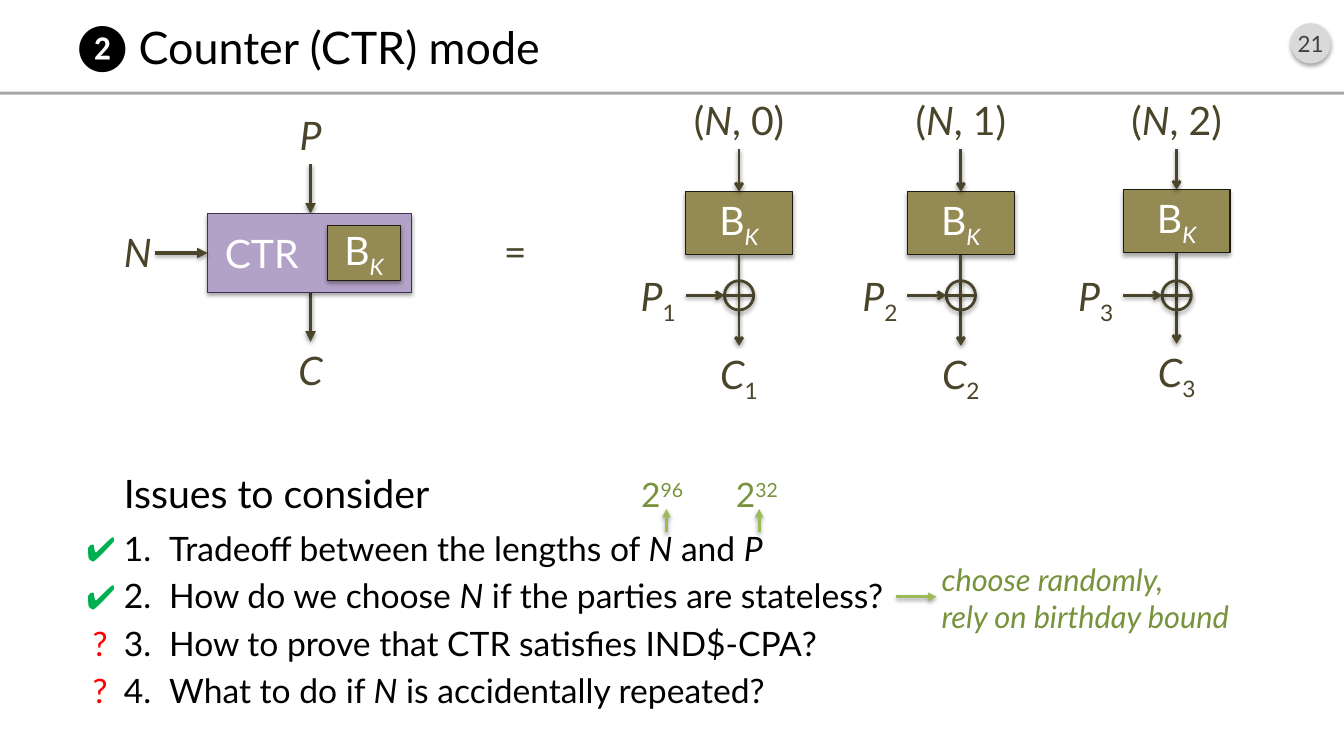
from dataclasses import dataclass

from lxml import etree
from pptx import Presentation, util as u
from pptx.dml.color import RGBColor
from pptx.enum import shapes as s, text as t
from pptx.oxml import ns

BLACK = RGBColor(0x00, 0x00, 0x00)
WHITE = RGBColor(0xFF, 0xFF, 0xFF)
RULE_GRAY = RGBColor(0xA6, 0xA6, 0xA6)
BADGE_GRAY = RGBColor(0xD9, 0xD9, 0xD9)
BADGE_TEXT = RGBColor(0x40, 0x40, 0x40)
BROWN = RGBColor(0x4A, 0x45, 0x2A)
OLIVE = RGBColor(0x94, 0x8A, 0x54)
OLIVE_EDGE = RGBColor(0x1E, 0x1C, 0x11)
PURPLE = RGBColor(0xB3, 0xA2, 0xC7)
PURPLE_EDGE = RGBColor(0x40, 0x31, 0x52)
NOTE_GREEN = RGBColor(0x77, 0x93, 0x3C)
ARROW_GREEN = RGBColor(0x9B, 0xBB, 0x59)
CHECK_GREEN = RGBColor(0x00, 0xB0, 0x50)
RED = RGBColor(0xFF, 0x00, 0x00)

LEFT, CENTER, RIGHT = t.PP_ALIGN.LEFT, t.PP_ALIGN.CENTER, t.PP_ALIGN.RIGHT
RECTANGLE, OVAL = s.MSO_SHAPE.RECTANGLE, s.MSO_SHAPE.OVAL
XOR_Y, XOR_SIZE = 2.93, 0.29
BLOCK_WIDTH, BLOCK_HEIGHT = 1.06, 0.63


@dataclass(frozen=True)
class Run:
    text: str
    italic: bool = False
    baseline: int = 0


@dataclass(frozen=True)
class Block:
    index: int
    center: float
    top: float


@dataclass(frozen=True)
class Mark:
    symbol: str
    left: float
    width: float
    color: RGBColor


N, P, C = (Run(letter, italic=True) for letter in "NPC")
CIPHER = [Run("B"), Run("K", italic=True, baseline=-25)]

BLOCKS = [Block(1, 7.33, 1.9), Block(2, 9.53, 1.9), Block(3, 11.67, 1.88)]
ISSUES = [
    [Run("Tradeoff between the lengths of "), N, Run(" and "), P],
    [Run("How do we choose "), N, Run(" if the parties are stateless?")],
    [Run("How to prove that CTR satisfies IND$-CPA?")],
    [Run("What to do if "), N, Run(" is accidentally repeated?")],
]
MARKS = [
    Mark("✔", 0.76, 0.54, CHECK_GREEN),
    Mark("✔", 0.76, 0.47, CHECK_GREEN),
    Mark("?", 0.82, 0.36, RED),
    Mark("?", 0.82, 0.36, RED),
]


def write(frame, runs: list[Run], size: float = 28, color: RGBColor = BROWN,
          align=LEFT, space_after: float = 0, numbered: bool = False) -> None:
    paragraph = frame.paragraphs[0]
    if paragraph.runs:
        paragraph = frame.add_paragraph()
    paragraph.alignment = align
    paragraph.space_after = u.Pt(space_after)
    if numbered:
        properties = paragraph._p.get_or_add_pPr()
        properties.set("marL", str(u.Inches(0.45)))
        properties.set("indent", str(u.Inches(-0.45)))
        etree.SubElement(properties, ns.qn("a:buFont"), typeface="+mj-lt")
        etree.SubElement(properties, ns.qn("a:buAutoNum"), type="arabicPeriod")
    for item in runs:
        for position, line in enumerate(item.text.split("\n")):
            if position:
                paragraph.add_line_break()
            run = paragraph.add_run()
            run.text = line
            run.font.name = "Lato"
            run.font.size = u.Pt(size)
            run.font.color.rgb = color
            run.font.italic = item.italic
            if item.baseline:
                run._r.get_or_add_rPr().set("baseline", str(item.baseline * 1000))


def add_shadow(shape, opacity: int, distance: float) -> None:
    effects = etree.SubElement(shape._element.spPr, ns.qn("a:effectLst"))
    shadow = etree.SubElement(
        effects, ns.qn("a:outerShdw"), blurRad=str(u.Pt(3.1)),
        dist=str(u.Pt(distance)), dir="5400000", rotWithShape="0")
    black = etree.SubElement(shadow, ns.qn("a:srgbClr"), val="000000")
    etree.SubElement(black, ns.qn("a:alpha"), val=str(opacity * 1000))


def add_label(slide, left: float, top: float, width: float, runs: list[Run],
              height: float = 0.57, wrap: bool = True, **style):
    label = slide.shapes.add_textbox(*map(u.Inches, (left, top, width, height)))
    label.text_frame.word_wrap = wrap
    label.text_frame.auto_size = t.MSO_AUTO_SIZE.SHAPE_TO_FIT_TEXT
    write(label.text_frame, runs, **style)
    return label


def add_box(slide, kind, left: float, top: float, width: float, height: float,
            fill: RGBColor | None = None, edge: RGBColor | None = None,
            edge_width: float = 0.75, shadowed: bool = True):
    shape = slide.shapes.add_shape(kind, *map(u.Inches, (left, top, width, height)))
    if fill is None:
        shape.fill.background()
    else:
        shape.fill.solid()
        shape.fill.fore_color.rgb = fill
    if edge is None:
        shape.line.fill.background()
    else:
        shape.line.color.rgb = edge
        shape.line.width = u.Pt(edge_width)
    if shadowed:
        add_shadow(shape, 35, 1.8)
    else:
        shape.shadow.inherit = False
    shape.text_frame.vertical_anchor = t.MSO_ANCHOR.MIDDLE
    return shape


def add_line(slide, x1: float, y1: float, x2: float, y2: float,
             color: RGBColor = BROWN, width: float = 2, head: str = "") -> None:
    line = slide.shapes.add_connector(
        s.MSO_CONNECTOR.STRAIGHT, *map(u.Inches, (x1, y1, x2, y2)))
    line.line.color.rgb = color
    line.line.width = u.Pt(width)
    if head:
        outline = line._element.spPr.find(ns.qn("a:ln"))
        etree.SubElement(outline, ns.qn("a:tailEnd"), type=head)
    add_shadow(line, 38, 1.6)


def add_cipher(slide, left: float, top: float, width: float, height: float) -> None:
    cipher = add_box(slide, RECTANGLE, left, top, width, height, OLIVE, OLIVE_EDGE)
    write(cipher.text_frame, CIPHER, color=WHITE, align=CENTER)


def add_block(slide, block: Block) -> None:
    center, top = block.center, block.top
    left, bottom = center - BLOCK_WIDTH / 2, top + BLOCK_HEIGHT
    xor_left = center - XOR_SIZE / 2
    index = Run(str(block.index), baseline=-25)
    add_cipher(slide, left, top, BLOCK_WIDTH, BLOCK_HEIGHT)
    add_line(slide, center, 1.48, center, top, head="arrow")
    add_line(slide, center, bottom, center, bottom + 0.9, head="arrow")
    add_label(slide, center - 0.77, 0.91, 1.54,
              [Run("("), N, Run(f", {block.index - 1})")], align=CENTER)
    add_label(slide, center - 0.77, bottom + 0.9, 1.54, [C, index], align=CENTER)
    add_box(slide, OVAL, xor_left, XOR_Y - XOR_SIZE / 2, XOR_SIZE, XOR_SIZE,
            edge=BROWN, edge_width=2)
    add_line(slide, xor_left, XOR_Y, xor_left + XOR_SIZE, XOR_Y)
    add_label(slide, left - 0.77, 2.65, 0.77, [P, index], align=RIGHT)
    add_line(slide, left, XOR_Y, xor_left, XOR_Y, head="arrow")


def add_header(slide) -> None:
    badge = add_box(slide, OVAL, 12.8, 0.23, 0.4, 0.4, BADGE_GRAY)
    badge.text_frame.margin_left = badge.text_frame.margin_right = 0
    write(badge.text_frame, [Run("21")], size=16, color=BADGE_TEXT, align=CENTER)
    add_box(slide, RECTANGLE, 0, 0.91, 13.33, 0.03, RULE_GRAY, shadowed=False)
    title = slide.shapes.title
    title.left, title.top, title.width, title.height = map(
        u.Inches, (0.67, 0.16, 12, 0.6))
    title.text_frame.auto_size = t.MSO_AUTO_SIZE.NONE
    title.text_frame.vertical_anchor = t.MSO_ANCHOR.MIDDLE
    write(title.text_frame, [Run("❷ Counter (CTR) mode")], size=32, color=BLACK)


def add_mode(slide) -> None:
    for start, end in ((1.63, 2.12), (2.9, 3.39)):
        add_line(slide, 3.08, start, 3.08, end, width=2.5, head="triangle")
    mode = add_box(slide, RECTANGLE, 2.06, 2.12, 2.02, 0.78, PURPLE, PURPLE_EDGE)
    mode.text_frame.margin_left = u.Inches(0.17)
    write(mode.text_frame, [Run("CTR")], color=WHITE)
    add_cipher(slide, 3.25, 2.24, 0.72, 0.54)
    add_label(slide, 2.64, 1.06, 0.88, [P], align=CENTER)
    add_label(slide, 2.64, 3.39, 0.88, [C], align=CENTER)
    add_label(slide, 1.13, 2.22, 0.41, [N], align=RIGHT)
    add_line(slide, 1.54, 2.51, 2.06, 2.51, width=2.5, head="triangle")
    add_label(slide, 4.67, 2.21, 0.88, [Run("=")], align=CENTER)


def add_issues(slide) -> None:
    issues = add_label(slide, 1.13, 4.61, 7.86, [Run("Issues to consider")],
                       height=2.51, wrap=False, color=BLACK, space_after=8)
    for issue in ISSUES:
        write(issues.text_frame, issue, size=24, color=BLACK, space_after=5,
              numbered=True)
    for row, mark in enumerate(MARKS):
        add_label(slide, mark.left, 5.19 + 0.47 * row, mark.width, [Run(mark.symbol)],
                  height=0.5, wrap=False, size=24, color=mark.color)
    for left, arrow_x, exponent in ((6.26, 6.61, "96"), (7.2, 7.53, "32")):
        add_label(slide, left, 4.65, 0.66, [Run("2"), Run(exponent, baseline=30)],
                  height=0.5, wrap=False, size=24, color=NOTE_GREEN)
        add_line(slide, arrow_x, 5.28, arrow_x, 5.05, ARROW_GREEN, head="triangle")
    add_label(slide, 9.24, 5.51, 3.14,
              [Run("choose randomly,\nrely on birthday bound", italic=True)],
              height=0.84, wrap=False, size=22, color=NOTE_GREEN)
    add_line(slide, 8.89, 5.92, 9.29, 5.92, ARROW_GREEN, head="triangle")


def main() -> None:
    presentation = Presentation()
    presentation.slide_width, presentation.slide_height = u.Inches(13.33), u.Inches(7.5)
    slide = presentation.slides.add_slide(presentation.slide_layouts[5])
    add_header(slide)
    add_issues(slide)
    for block in BLOCKS:
        add_block(slide, block)
    add_mode(slide)
    presentation.save("out.pptx")


if __name__ == "__main__":
    main()
